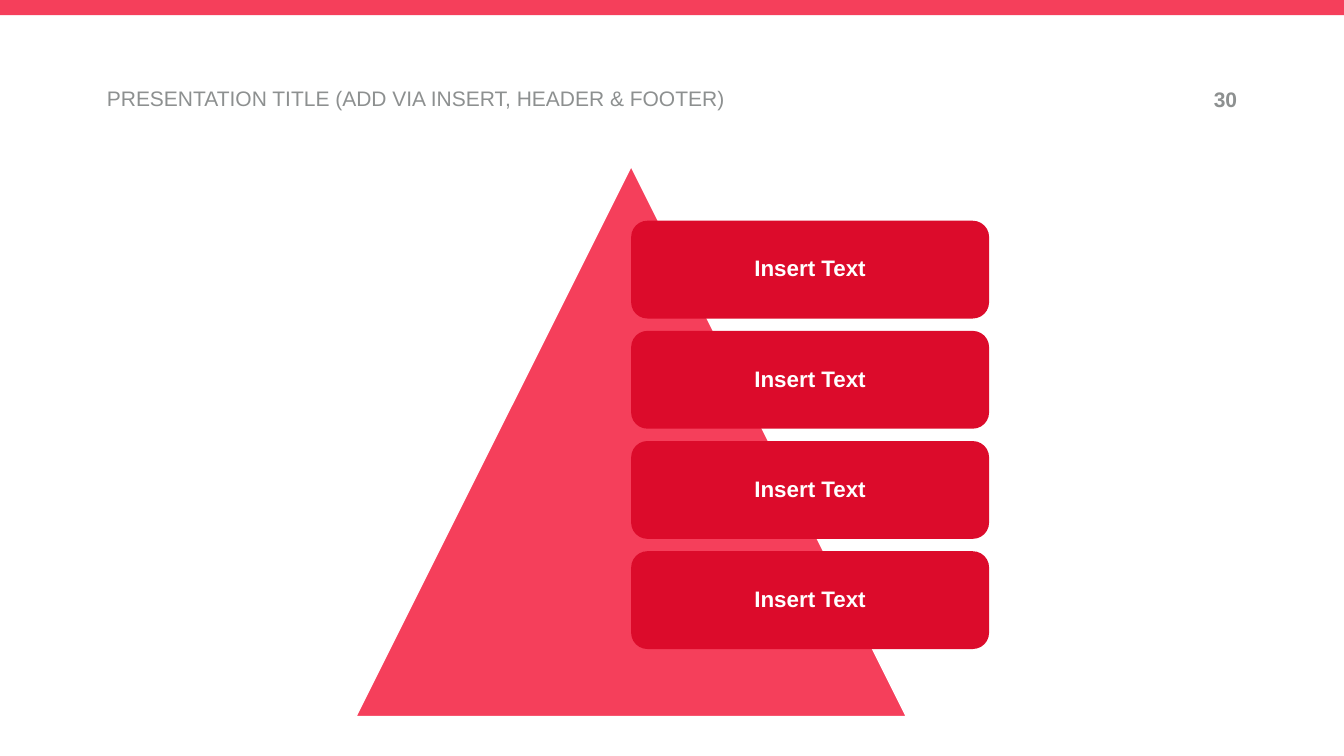
from pptx import Presentation
from pptx.dml.color import RGBColor
from pptx.enum.shapes import MSO_SHAPE
from pptx.enum.text import MSO_ANCHOR, MSO_AUTO_SIZE, PP_ALIGN
from pptx.util import Inches, Pt

RECTANGLE = MSO_SHAPE.RECTANGLE
TRIANGLE = MSO_SHAPE.ISOSCELES_TRIANGLE
ROUNDED = MSO_SHAPE.ROUNDED_RECTANGLE
MIDDLE = MSO_ANCHOR.MIDDLE
GROW = MSO_AUTO_SIZE.SHAPE_TO_FIT_TEXT
LEFT, CENTER, RIGHT = PP_ALIGN.LEFT, PP_ALIGN.CENTER, PP_ALIGN.RIGHT

COLORS = {"coral": "F53F5B", "crimson": "DC0B2B", "gray": "8D9090", "white": "FFFFFF"}

deck = Presentation()
deck.slide_width = Inches(13.33)
deck.slide_height = Inches(7.5)
page = deck.slides.add_slide(deck.slide_layouts[6])


def add_filled(kind, left, top, width, height, color):
    shape = page.shapes.add_shape(
        kind, Inches(left), Inches(top), Inches(width), Inches(height))
    shape.shadow.inherit = False
    shape.fill.solid()
    shape.fill.fore_color.rgb = RGBColor.from_string(COLORS[color])
    shape.line.fill.background()
    return shape


def write_text(shape, text, size, color, bold, align, inset):
    frame = shape.text_frame
    frame.word_wrap = True
    frame.margin_left = frame.margin_right = Inches(inset)
    frame.margin_top = frame.margin_bottom = Inches(inset)
    para = frame.paragraphs[0]
    para.text = text
    para.alignment = align
    para.font.name = "Arial"
    para.font.size = Pt(size)
    para.font.bold = bold
    para.font.color.rgb = RGBColor.from_string(COLORS[color])
    return frame


add_filled(RECTANGLE, 0, 0, 13.33, 0.15, "coral")

headers = [
    ("PRESENTATION TITLE (ADD VIA INSERT, HEADER & FOOTER)", 1.06, 0.85, 7.85, False, LEFT),
    ("30", 10.74, 0.86, 1.53, True, RIGHT),
]
for text, left, top, width, bold, align in headers:
    box = page.shapes.add_textbox(Inches(left), Inches(top), Inches(width), Inches(0.25))
    frame = write_text(box, text, 15, "gray", bold, align, 0)
    frame.auto_size = GROW

pyramid = add_filled(TRIANGLE, 3.53, 1.65, 5.46, 5.46, "coral")
pyramid.line.color.rgb = RGBColor.from_string(COLORS["white"])
pyramid.line.width = Pt(1)

labels = ["Insert Text"] * 4
for index, label in enumerate(labels):
    card = add_filled(ROUNDED, 6.26, 2.19 + 1.093 * index, 3.55, 0.97, "crimson")
    frame = write_text(card, label, 16, "white", True, CENTER, 0.07)
    frame.vertical_anchor = MIDDLE
    frame.paragraphs[0].line_spacing = 0.9

deck.save("out.pptx")
